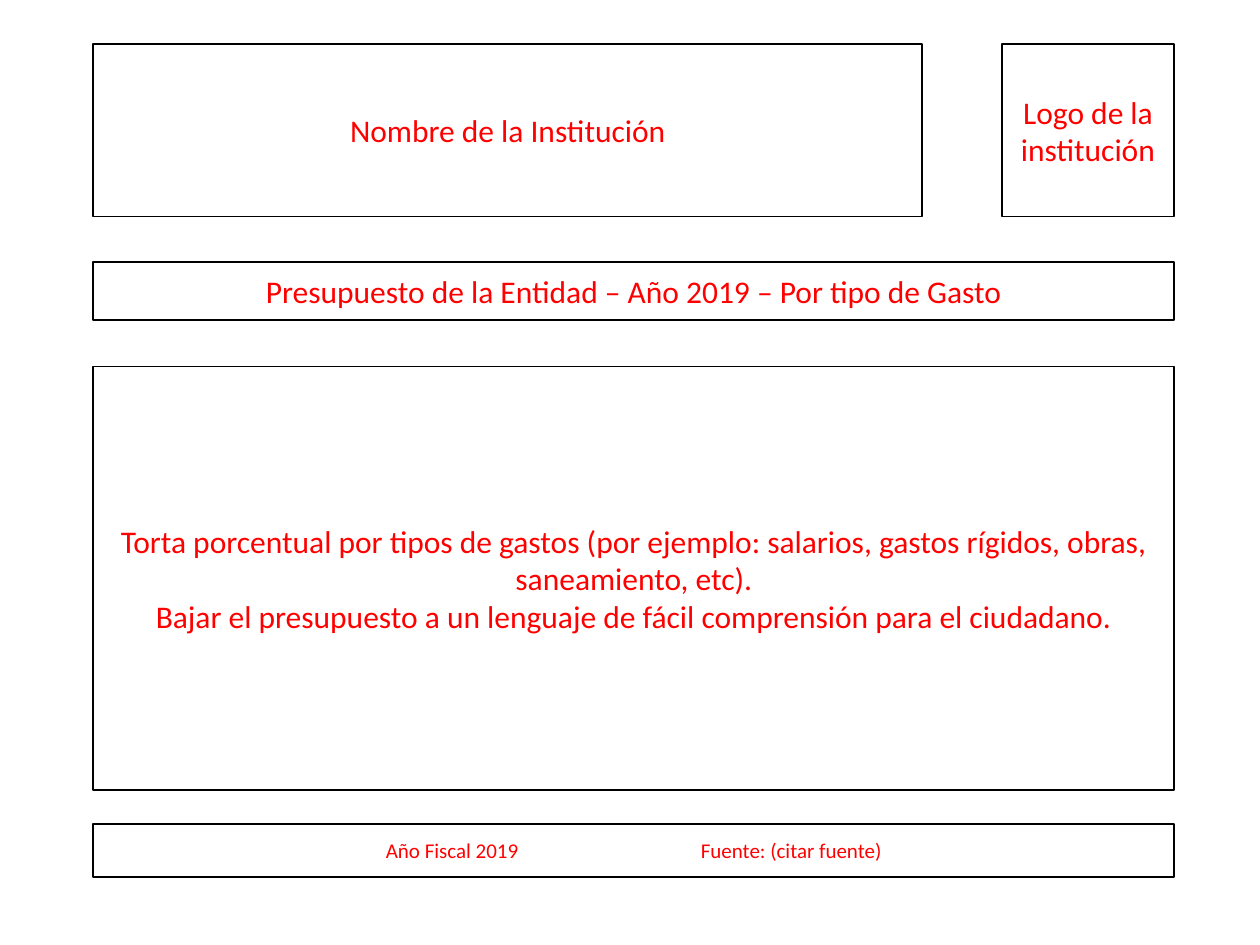
from pptx import Presentation
from pptx.dml.color import RGBColor
from pptx.enum.shapes import MSO_SHAPE
from pptx.enum.text import MSO_ANCHOR, PP_ALIGN
from pptx.util import Inches, Pt

RECTANGLE = MSO_SHAPE.RECTANGLE
MIDDLE = MSO_ANCHOR.MIDDLE
CENTER = PP_ALIGN.CENTER

TITLE_ONLY = 5
LEFT, WIDTH = 0.74, 8.58
HEADER_TOP, HEADER_SIZE = 0.35, 1.37
NAME_WIDTH = 6.58
LOGO_LEFT = LEFT + WIDTH - HEADER_SIZE

TITLE = "Presupuesto de la Entidad – Año 2019 – Por tipo de Gasto"
CHART_NOTES = [
    "Torta porcentual por tipos de gastos (por ejemplo: salarios, gastos rígidos, "
    "obras, saneamiento, etc).",
    "Bajar el presupuesto a un lenguaje de fácil comprensión para el ciudadano.",
]


def color(value):
    return RGBColor.from_string(value)


def format_box(box, lines, size=18):
    box.shadow.inherit = False
    box.fill.background()
    box.line.color.rgb = color("000000")
    box.line.width = Pt(1)
    frame = box.text_frame
    frame.word_wrap = True
    frame.vertical_anchor = MIDDLE
    frame.text = "\n".join(lines)
    for para in frame.paragraphs:
        para.alignment = CENTER
        para.font.name = "Calibri"
        para.font.size = Pt(size)
        para.font.color.rgb = color("FF0000")


def add_box(page, left, top, width, height, lines, size=18):
    area = [Inches(length) for length in (left, top, width, height)]
    box = page.shapes.add_shape(RECTANGLE, *area)
    format_box(box, lines, size)


def place_title(page, top, height):
    title = page.shapes.title
    title.left, title.top = Inches(LEFT), Inches(top)
    title.width, title.height = Inches(WIDTH), Inches(height)
    format_box(title, [TITLE])


def main():
    deck = Presentation()
    deck.slide_width, deck.slide_height = Inches(10), Inches(7.5)
    page = deck.slides.add_slide(deck.slide_layouts[TITLE_ONLY])
    place_title(page, 2.08, 0.46)
    add_box(page, LOGO_LEFT, HEADER_TOP, HEADER_SIZE, HEADER_SIZE,
            ["Logo de la institución"])
    add_box(page, LEFT, HEADER_TOP, NAME_WIDTH, HEADER_SIZE,
            ["Nombre de la Institución"])
    add_box(page, LEFT, 6.54, WIDTH, 0.42,
            ["Año Fiscal 2019 \t\t\tFuente: (citar fuente)"], size=12)
    add_box(page, LEFT, 2.91, WIDTH, 3.36, CHART_NOTES)
    deck.save("out.pptx")


if __name__ == "__main__":
    main()
